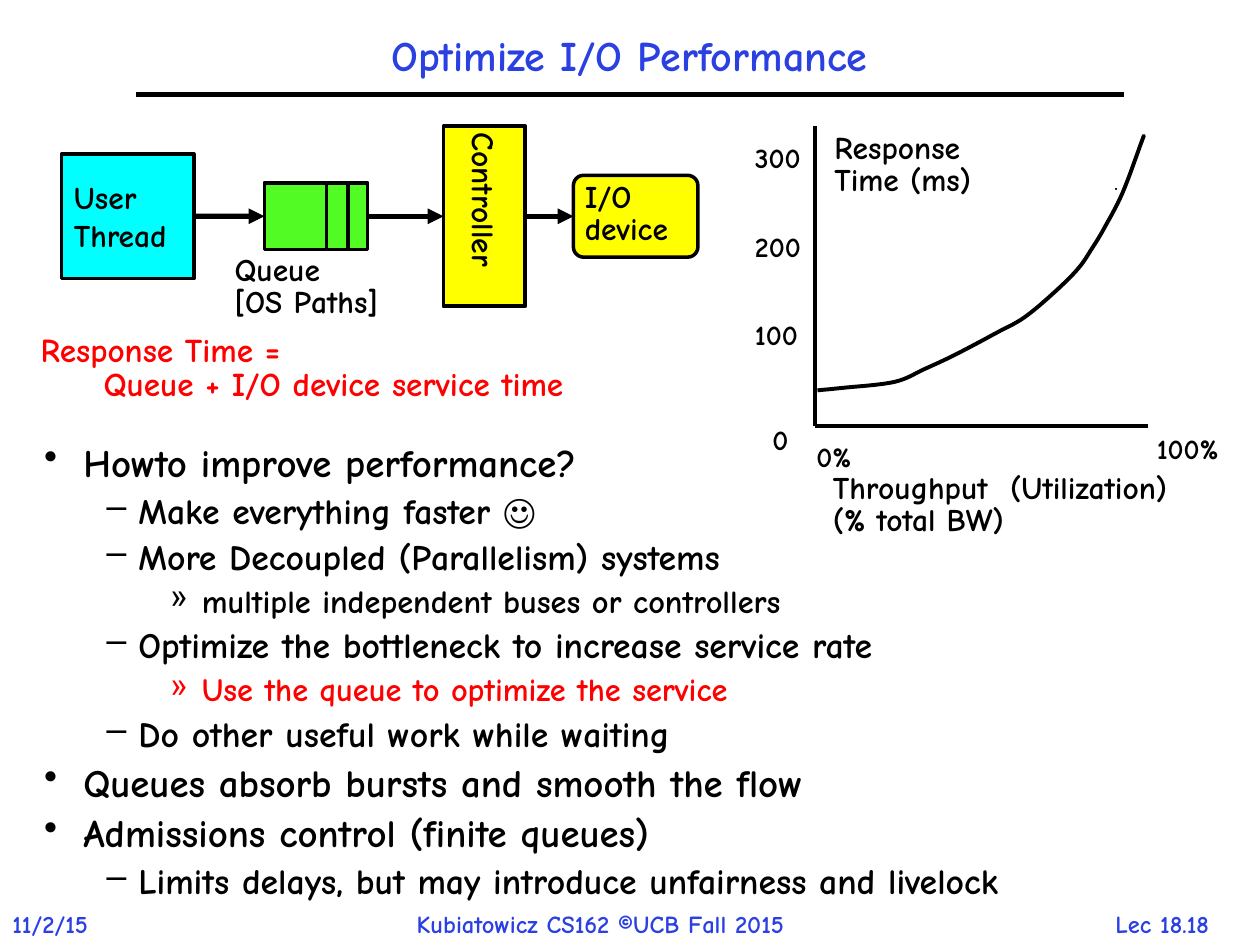
from lxml import etree
from pptx import Presentation
from pptx.dml.color import RGBColor
from pptx.enum.shapes import MSO_CONNECTOR, MSO_SHAPE
from pptx.enum.text import MSO_ANCHOR, PP_ALIGN
from pptx.oxml.ns import qn
from pptx.util import Cm, Pt

STRAIGHT = MSO_CONNECTOR.STRAIGHT
RECT, ROUNDED, OVAL = MSO_SHAPE.RECTANGLE, MSO_SHAPE.ROUNDED_RECTANGLE, MSO_SHAPE.OVAL
LEFT, CENTER = PP_ALIGN.LEFT, PP_ALIGN.CENTER
TOP, MIDDLE = MSO_ANCHOR.TOP, MSO_ANCHOR.MIDDLE
FONT = "Comic Neue"
COLORS = {"black": "000000", "blue": "2A40E2", "red": "FF0000",
          "cyan": "00FFFF", "green": "53FB25", "yellow": "FFFF00"}
WIDE, NARROW = (0.25, 0.13), (0.18, 0.08)  # horizontal and vertical insets

TITLE = "Optimize I/O Performance"
# text, left, width, alignment
FOOTERS = [
    ("11/2/15", 0, 2.54, LEFT),
    ("Kubiatowicz CS162 ©UCB Fall 2015", 8.15, 9.17, LEFT),
    ("Lec 18.18", 21.74, 3.38, CENTER),
]
# level, text, color
BULLETS = [
    (0, "Howto improve performance?", "black"),
    (1, "Make everything faster ☺", "black"),
    (1, "More Decoupled (Parallelism) systems", "black"),
    (2, "multiple independent buses or controllers", "black"),
    (1, "Optimize the bottleneck to increase service rate", "black"),
    (2, "Use the queue to optimize the service", "red"),
    (1, "Do other useful work while waiting", "black"),
    (0, "Queues absorb bursts and smooth the flow", "black"),
    (0, "Admissions control (finite queues)", "black"),
    (1, "Limits delays, but may introduce unfairness and livelock", "black"),
]
# mark, size, left margin, hanging indent
LEVELS = [("•", 22.2, 0.79, 0.79), ("–", 20.4, 1.9, 0.64), ("»", 18.5, 3.18, 0.64)]

# Stages share one centre line: form, fill, left, width, height, text
STAGE_MIDDLE = 4.36
STAGES = [
    (RECT, "cyan", 1.24, 2.67, 2.51, ["User", "Thread"]),
    (RECT, "green", 5.33, 2.08, 1.35, []),
    (RECT, "yellow", 8.94, 1.65, 3.63, ["Controller"]),
    (ROUNDED, "yellow", 11.56, 2.51, 1.65, []),
]
CONTROLLER, DEVICE = 2, 3
QUEUE_DIVIDERS = [6.58, 7.01]

# paragraphs, (left, top, width, height), size, color, line spacing
LABELS = [
    (["Response Time = \n\tQueue + I/O device service time"],
     (0.64, 6.68, 16.94, 1.52), 19, "red", 0.85),
    (["Queue", "[OS Paths]"], (4.55, 5.08, 3.76, 1.45), 18, "black", 0.85),
    (["I/O", "device"], (11.61, 3.61, 2.36, 1.47), 18, "black", 0.85),
    (["Response", "Time (ms)"], (16.64, 2.62, 3.43, 1.47), 18, "black", 0.85),
    (["Throughput  (Utilization)", "(% total BW)"], (16.61, 9.47, 8.03, 1.45), 18, "black", 0.85),
    (["0"], (15.39, 8.51, 0.71, 0.76), 16, "black", 0.9),
    (["0%"], (16.28, 8.86, 1.19, 0.76), 16, "black", 0.9),
    (["100%"], (23.14, 8.69, 1.85, 0.76), 16, "black", 0.9),
]
LABELS += [([str(value)], (15.04, 8.18 - 1.78 * value / 100, 1.4, 0.76), 16, "black", 0.9)
           for value in (100, 200, 300)]

AXIS_LEFT, AXIS_TOP, AXIS_RIGHT, AXIS_BOTTOM = 16.43, 2.54, 23.14, 8.59
CURVE = [
    (16.48, 7.87), (16.99, 7.82), (18.03, 7.7), (18.64, 7.44), (19.28, 7.14),
    (20.09, 6.71), (20.65, 6.4), (21.26, 5.89), (21.74, 5.41), (22.02, 5),
    (22.25, 4.62), (22.63, 3.89), (23.01, 2.87), (23.06, 2.74),
]


def rgb(name):
    return RGBColor.from_string(COLORS[name])


def add_span(para, text, size, color):
    span = para.add_run()
    span.text = text
    span.font.name, span.font.size, span.font.bold = FONT, Pt(size), True
    span.font.color.rgb = rgb(color)


def set_frame(frame, insets, wrap, anchor=TOP):
    frame.margin_left = frame.margin_right = Cm(insets[0])
    frame.margin_top = frame.margin_bottom = Cm(insets[1])
    frame.word_wrap, frame.vertical_anchor = wrap, anchor


def write(frame, lines, size, color, spacing=1.0, align=LEFT):
    """Write one paragraph per entry; a newline inside an entry is a line break."""
    for index, line in enumerate(lines):
        para = frame.add_paragraph() if index else frame.paragraphs[0]
        para.alignment, para.line_spacing = align, spacing
        for part_index, part in enumerate(line.split("\n")):
            if part_index:
                para.add_line_break()
            add_span(para, part, size, color)


def add_box_text(page, place, insets=NARROW, wrap=False):
    frame = page.shapes.add_textbox(*map(Cm, place)).text_frame
    set_frame(frame, insets, wrap)
    return frame


def add_line(page, start, end, width, arrow=False):
    line = page.shapes.add_connector(STRAIGHT, *map(Cm, start + end))
    line.line.color.rgb, line.line.width = rgb("black"), Pt(width)
    if arrow:
        etree.SubElement(line.get_or_add_ln(), qn("a:tailEnd"), type="triangle")
    etree.SubElement(line.element.spPr, qn("a:effectLst"))
    return line


def add_bullets(page):
    frame = add_box_text(page, (0.64, 8.89, 24, 9.55), WIDE, True)
    for index, (level, text, color) in enumerate(BULLETS):
        mark, size, margin, hanging = LEVELS[level]
        para = frame.add_paragraph() if index else frame.paragraphs[0]
        para.level, para.line_spacing = level, 0.8
        para.space_before = Pt(round(size * 0.34, 1))
        add_span(para, text, size, color)
        props = para._p.get_or_add_pPr()
        props.set("marL", str(Cm(margin)))
        props.set("indent", str(-Cm(hanging)))
        etree.SubElement(props, qn("a:buChar"), char=mark)


def add_stages(page):
    boxes = []
    for form, fill, left, width, height, lines in STAGES:
        top = STAGE_MIDDLE - height / 2
        box = page.shapes.add_shape(form, *map(Cm, (left, top, width, height)))
        box.shadow.inherit = False
        box.fill.solid()
        box.fill.fore_color.rgb = rgb(fill)
        box.line.color.rgb, box.line.width = rgb("black"), Pt(2)
        set_frame(box.text_frame, WIDE, True, MIDDLE)
        write(box.text_frame, lines, 18, "black")
        boxes.append(box)
    boxes[CONTROLLER].element.txBody.bodyPr.set("vert", "eaVert")
    boxes[DEVICE].adjustments[0] = 0.125

    for source, target in zip(boxes, boxes[1:]):
        arrow = add_line(page, (0, 0), (1, 0), 3, arrow=True)
        arrow.begin_connect(source, 3)
        arrow.end_connect(target, 1)
    for x in QUEUE_DIVIDERS:
        add_line(page, (x, 3.66), (x, 5.05), 2)


def smooth_points(knots, steps=8):
    """Return points on a Catmull-Rom curve through the knots."""
    padded = [knots[0], *knots, knots[-1]]
    points = [knots[0]]
    for quad in zip(padded, padded[1:], padded[2:], padded[3:]):
        for step in range(1, steps + 1):
            t = step / steps
            points.append(tuple(
                b + t * (c - a) / 2 + t * t * (2 * a - 5 * b + 4 * c - d) / 2
                + t ** 3 * (3 * b - a - 3 * c + d) / 2
                for a, b, c, d in zip(*quad)))
    return points


def add_graph(page):
    add_line(page, (AXIS_LEFT, AXIS_BOTTOM), (AXIS_LEFT, AXIS_TOP), 2)
    add_line(page, (AXIS_LEFT, AXIS_BOTTOM), (AXIS_RIGHT, AXIS_BOTTOM), 2)
    first, *rest = [(Cm(x), Cm(y)) for x, y in smooth_points(CURVE)]
    builder = page.shapes.build_freeform(*first)
    builder.add_line_segments(rest, close=False)
    curve = builder.convert_to_shape()
    curve.shadow.inherit = False
    curve.fill.background()
    curve.line.color.rgb, curve.line.width = rgb("black"), Pt(2.25)

    dot = page.shapes.add_shape(OVAL, Cm(22.48), Cm(3.79), Cm(0.04), Cm(0.04))
    dot.shadow.inherit = False
    dot.fill.solid()
    dot.fill.fore_color.rgb = rgb("black")
    dot.line.fill.background()


def main():
    deck = Presentation()
    deck.slide_width, deck.slide_height = Cm(25.4), Cm(19.05)
    page = deck.slides.add_slide(deck.slide_layouts[5])

    title = page.shapes.title
    title.left, title.top, title.width, title.height = map(Cm, (2.74, 0.43, 19.9, 1.47))
    set_frame(title.text_frame, WIDE, True, MIDDLE)
    write(title.text_frame, [TITLE], 24, "blue", 0.9, CENTER)
    add_line(page, (2.74, 1.9), (22.66, 1.9), 3)

    for text, left, width, align in FOOTERS:
        frame = add_box_text(page, (left, 18.19, width, 0.85), WIDE)
        write(frame, [text], 14, "blue", align=align)
    add_bullets(page)
    add_stages(page)
    add_graph(page)
    for lines, place, size, color, spacing in LABELS:
        write(add_box_text(page, place), lines, size, color, spacing)
    deck.save("out.pptx")


if __name__ == "__main__":
    main()
